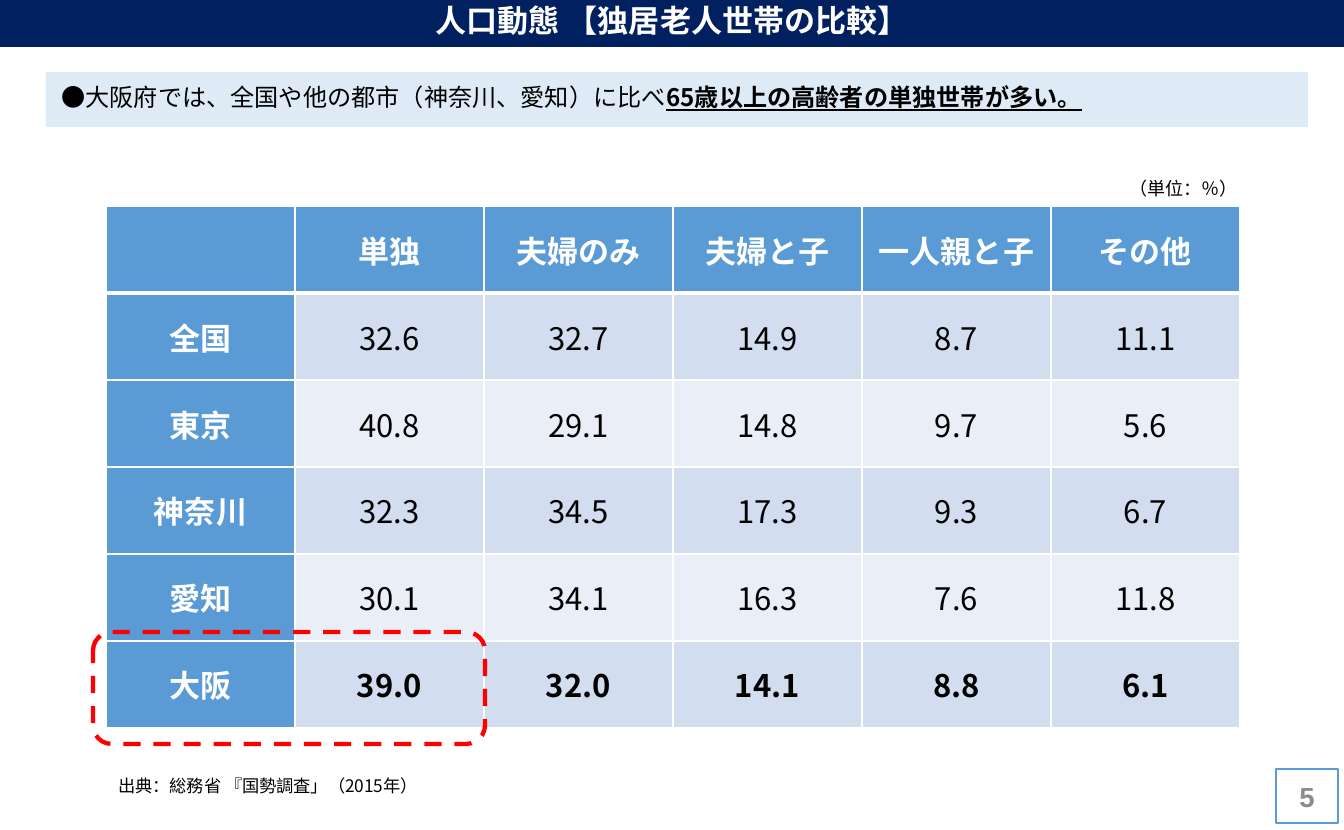
import pptx
import pptx.util
import pptx.dml.color
import pptx.enum.dml
import pptx.enum.shapes
import pptx.enum.text
import pptx.oxml
import pptx.oxml.ns

RGBColor = pptx.dml.color.RGBColor
WHITE = RGBColor(0xFF, 0xFF, 0xFF)
BLACK = RGBColor(0x00, 0x00, 0x00)
NAVY = RGBColor(0x00, 0x20, 0x60)
BLUE = RGBColor(0x5B, 0x9B, 0xD5)
PALE_BLUE = RGBColor(0xDE, 0xEB, 0xF7)
BAND_DARK = RGBColor(0xD2, 0xDE, 0xEF)
BAND_LIGHT = RGBColor(0xEA, 0xEF, 0xF7)
GRAY = RGBColor(0x8C, 0x8C, 0x8C)
RED = RGBColor(0xFF, 0x00, 0x00)

EMU_PER_PX = 7368
CJK_FONT = "Noto Sans CJK JP"
SHAPE = pptx.enum.shapes.MSO_SHAPE
ANCHOR = pptx.enum.text.MSO_ANCHOR
LEFT = pptx.enum.text.PP_ALIGN.LEFT
CENTER = pptx.enum.text.PP_ALIGN.CENTER

COLUMN_HEADS = ["", "単独", "夫婦のみ", "夫婦と子", "一人親と子", "その他"]
HOUSEHOLDS = [
    ["全国", "32.6", "32.7", "14.9", "8.7", "11.1"],
    ["東京", "40.8", "29.1", "14.8", "9.7", "5.6"],
    ["神奈川", "32.3", "34.5", "17.3", "9.3", "6.7"],
    ["愛知", "30.1", "34.1", "16.3", "7.6", "11.8"],
    ["大阪", "39.0", "32.0", "14.1", "8.8", "6.1"],
]


def px(length):
    return pptx.util.Emu(length * EMU_PER_PX)


def style_paragraph(paragraph, size, color, bold=None, align=LEFT, name=CJK_FONT):
    paragraph.alignment = align
    font = paragraph.font
    font.size = pptx.util.Pt(size)
    font.bold = bold
    font.color.rgb = color
    font.name = name
    # East Asian typeface follows the Latin one
    properties = paragraph._p.pPr.find(pptx.oxml.ns.qn("a:defRPr"))
    east_asian = pptx.oxml.parse_xml(
        f'<a:ea {pptx.oxml.ns.nsdecls("a")} typeface="{name}"/>')
    properties.find(pptx.oxml.ns.qn("a:latin")).addnext(east_asian)


def add_box(slide, box, kind=SHAPE.RECTANGLE, fill=None, line=None, width=0.75):
    shape = slide.shapes.add_shape(kind, *map(px, box))
    shape.shadow.inherit = False
    if fill is None:
        shape.fill.background()
    else:
        shape.fill.solid()
        shape.fill.fore_color.rgb = fill
    if line is None:
        shape.line.fill.background()
    else:
        shape.line.color.rgb = line
        shape.line.width = pptx.util.Pt(width)
    shape.text_frame.word_wrap = True
    shape.text_frame.vertical_anchor = ANCHOR.TOP
    return shape


def add_page_number(slide, box):
    frame = add_box(slide, box, line=BLUE).text_frame
    frame.vertical_anchor = ANCHOR.MIDDLE
    paragraph = frame.paragraphs[0]
    paragraph.text = "5"
    style_paragraph(paragraph, 16, GRAY, True, CENTER, "Arial")


def add_message(slide, box):
    frame = add_box(slide, box, fill=PALE_BLUE).text_frame
    frame.margin_left = frame.margin_top = px(10)
    frame.margin_right = frame.margin_bottom = 0
    paragraph = frame.paragraphs[0]
    style_paragraph(paragraph, 14, BLACK)
    paragraph._p.pPr.set("marL", str(px(25)))
    paragraph._p.pPr.set("indent", str(px(-25)))
    paragraph.add_run().text = " ●大阪府では、全国や他の都市（神奈川、愛知）に比べ"
    emphasis = paragraph.add_run()
    emphasis.text = "65歳以上の高齢者の単独世帯が多い。"
    emphasis.font.bold = True
    emphasis.font.underline = True


def add_title(slide, box):
    paragraph = add_box(slide, box, fill=NAVY).text_frame.paragraphs[0]
    paragraph.text = "人口動態 【独居老人世帯の比較】"
    paragraph.line_spacing = 0.9
    style_paragraph(paragraph, 18, WHITE, True, CENTER)


def add_caption(slide, box, text, size):
    frame = slide.shapes.add_textbox(*map(px, box)).text_frame
    frame.word_wrap = True
    paragraph = frame.paragraphs[0]
    paragraph.text = text
    style_paragraph(paragraph, size, BLACK)


def set_borders(cell, widths):
    properties = cell._tc.get_or_add_tcPr()
    for index, (side, width) in enumerate(widths.items()):
        properties.insert(index, pptx.oxml.parse_xml(
            f'<a:ln{side} {pptx.oxml.ns.nsdecls("a")} w="{pptx.util.Pt(width)}">'
            f'<a:solidFill><a:srgbClr val="{WHITE}"/></a:solidFill></a:ln{side}>'))


def add_household_table(slide, box):
    rows = [COLUMN_HEADS] + HOUSEHOLDS
    table = slide.shapes.add_table(
        len(rows), len(COLUMN_HEADS), *map(px, box)).table
    for column in table.columns:
        column.width = px(box[2] // len(COLUMN_HEADS))
    for row_index, values in enumerate(rows):
        table.rows[row_index].height = px(box[3] // len(rows))
        band = BAND_DARK if row_index % 2 else BAND_LIGHT
        for column_index, value in enumerate(values):
            is_head = row_index == 0 or column_index == 0
            is_last = row_index == len(rows) - 1
            cell = table.cell(row_index, column_index)
            cell.fill.solid()
            cell.fill.fore_color.rgb = BLUE if is_head else band
            cell.vertical_anchor = ANCHOR.MIDDLE
            cell.margin_left = cell.margin_right = px(9)
            cell.margin_top = cell.margin_bottom = 0
            paragraph = cell.text_frame.paragraphs[0]
            paragraph.text = value
            style_paragraph(paragraph, 18, WHITE if is_head else BLACK,
                            is_head or is_last, CENTER)
            # Thick rule below the header row
            set_borders(cell, {"L": 1, "R": 1,
                               "T": 3 if row_index == 1 else 1,
                               "B": 3 if row_index == 0 else 1})


def add_highlight(slide, box):
    frame = add_box(slide, box, SHAPE.ROUNDED_RECTANGLE, line=RED, width=2.5)
    frame.line.dash_style = pptx.enum.dml.MSO_LINE.DASH


def main():
    presentation = pptx.Presentation()
    presentation.slide_width = px(1344)
    presentation.slide_height = px(830)
    slide = presentation.slides.add_slide(presentation.slide_layouts[6])

    # Header, message and page number
    add_page_number(slide, (1276, 769, 62, 54))
    add_message(slide, (46, 72, 1262, 55))
    add_title(slide, (0, 0, 1344, 47))

    # Table with its source, highlight and unit
    add_caption(slide, (106, 769, 398, 34), "出典：総務省 『国勢調査」（2015年）", 10)
    add_household_table(slide, (106, 206, 1134, 522))
    add_highlight(slide, (93, 632, 392, 112))
    add_caption(slide, (1117, 171, 140, 35), "（単位：％）", 10.5)

    presentation.save("out.pptx")


if __name__ == "__main__":
    main()
